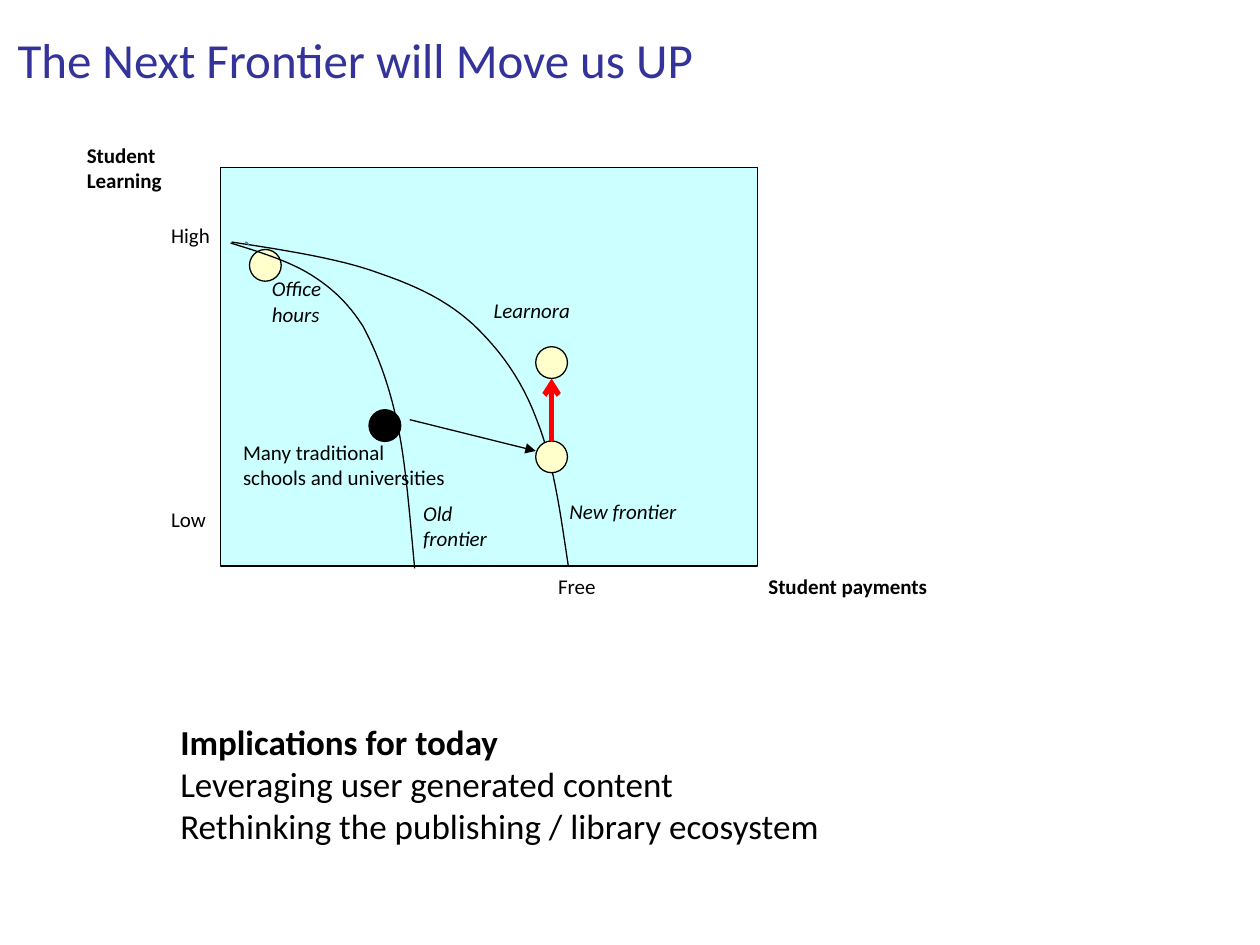
from lxml.etree import SubElement
from pptx import Presentation
from pptx.dml.color import RGBColor
from pptx.enum.shapes import MSO_CONNECTOR, MSO_SHAPE
from pptx.enum.text import MSO_ANCHOR, MSO_AUTO_SIZE, PP_ALIGN
from pptx.oxml.ns import qn
from pptx.util import Cm, Pt

BLACK, NAVY, RED = "000000", "333399", "FF0000"
AQUA, CREAM, BLUE = "CCFFFF", "FFFFCC", "4B7EBC"
DOT_SIZE = 0.64
CURVE_STEPS = 12


def color(hex_string):
    return RGBColor.from_string(hex_string)


def bezier(points):
    """Sample a chain of cubic curves: a start, then three points per curve."""
    samples = [points[0]]
    for first in range(0, len(points) - 1, 3):
        a, b, c, d = points[first:first + 4]
        for step in range(1, CURVE_STEPS + 1):
            t = step / CURVE_STEPS
            u = 1 - t
            samples.append(tuple(
                u**3 * a[axis] + 3 * u * u * t * b[axis]
                + 3 * u * t * t * c[axis] + t**3 * d[axis]
                for axis in (0, 1)))
    return samples


class SlideBuilder:
    font = "Calibri"
    label_size = 12
    line_width = 0.75

    def __init__(self, slide):
        self.slide = slide
        self.shapes = slide.shapes

    def format_text(self, paragraph, size, text_color=BLACK, bold=False, italic=False):
        paragraph.alignment = PP_ALIGN.LEFT
        paragraph.space_before = Pt(0)
        for run in paragraph.runs:
            font = run.font
            font.name, font.size = self.font, Pt(size)
            font.bold, font.italic = bold, italic
            font.color.rgb = color(text_color)

    def place(self, shape, left, top, width, height):
        shape.left, shape.top = Cm(left), Cm(top)
        shape.width, shape.height = Cm(width), Cm(height)

    def title(self, text, *box):
        shape = self.shapes.title
        self.place(shape, *box)
        frame = shape.text_frame
        frame.text = text
        frame.vertical_anchor = MSO_ANCHOR.BOTTOM
        frame.auto_size = MSO_AUTO_SIZE.NONE
        self.format_text(frame.paragraphs[0], 28, NAVY)

    def body(self, lines, *box):
        shape = self.slide.placeholders[1]
        self.place(shape, *box)
        frame = shape.text_frame
        frame.text = "\n".join(lines)
        frame.word_wrap = False
        frame.auto_size = MSO_AUTO_SIZE.NONE
        for index, paragraph in enumerate(frame.paragraphs):
            self.format_text(paragraph, 20, bold=index == 0)
            properties = paragraph._p.get_or_add_pPr()
            properties.set("marL", "0")
            properties.set("indent", "0")
            SubElement(properties, qn("a:buNone"))

    def label(self, text, left, top, width, height=0.76, wrap=False, **style):
        shape = self.shapes.add_textbox(Cm(left), Cm(top), Cm(width), Cm(height))
        frame = shape.text_frame
        frame.text = text
        frame.word_wrap = wrap
        for paragraph in frame.paragraphs:
            self.format_text(paragraph, self.label_size, **style)

    def outline(self, shape, line_color=BLACK, fill=None):
        shape.shadow.inherit = False
        shape.line.color.rgb = color(line_color)
        shape.line.width = Pt(self.line_width)
        if fill:
            shape.fill.solid()
            shape.fill.fore_color.rgb = color(fill)
        else:
            shape.fill.background()

    def shape(self, kind, left, top, width, height, fill=None, line_color=BLACK):
        shape = self.shapes.add_shape(kind, Cm(left), Cm(top), Cm(width), Cm(height))
        self.outline(shape, line_color, fill)

    def dot(self, left, top, fill=CREAM):
        self.shape(MSO_SHAPE.OVAL, left, top, DOT_SIZE, DOT_SIZE, fill)

    def curve(self, points):
        start, *rest = [(Cm(x), Cm(y)) for x, y in bezier(points)]
        builder = self.shapes.build_freeform(*start)
        builder.add_line_segments(rest, close=False)
        self.outline(builder.convert_to_shape())

    def arrow(self, start, end, head, line_color=BLACK, width=line_width):
        connector = self.shapes.add_connector(
            MSO_CONNECTOR.STRAIGHT, *(Cm(value) for value in (*start, *end)))
        connector.line.color.rgb = color(line_color)
        connector.line.width = Pt(width)
        SubElement(connector.line._get_or_add_ln(), qn("a:tailEnd"), type=head)
        SubElement(connector._element.spPr, qn("a:effectLst"))


def main():
    presentation = Presentation()
    presentation.slide_width, presentation.slide_height = Cm(25.4), Cm(19.05)
    slide = presentation.slides.add_slide(presentation.slide_layouts[1])
    builder = SlideBuilder(slide)

    # Title and implications
    builder.title("The Next Frontier will Move us UP", 0.1, -0.2, 23.06, 2.11)
    builder.body(["Implications for today",
                  "Leveraging user generated content",
                  "Rethinking the publishing / library ecosystem"],
                 3.38, 14.4, 13.51, 2.82)

    # Plot area and axis labels
    builder.shape(MSO_SHAPE.RECTANGLE, 4.45, 3.38, 10.82, 8.03, AQUA)
    builder.label("Student\nLearning", 1.5, 2.74, 2.31, 1.27, bold=True)
    builder.label("High", 3.2, 4.37, 1.37)
    builder.label("Low", 3.2, 10.08, 1.3)
    builder.label("Free", 11, 11.43, 1.27)
    builder.label("Student payments", 15.24, 11.43, 3.76, bold=True)

    # Frontiers, with the dots that lie beneath or on them
    builder.curve([(4.67, 4.88), (5.77, 5.05), (6.83, 5.21), (7.65, 5.51),
                   (8.46, 5.79), (9.02, 6.07), (9.55, 6.55),
                   (10.08, 7.06), (10.52, 7.65), (10.82, 8.46),
                   (11.15, 9.27), (11.3, 10.34), (11.46, 11.43)])
    builder.dot(10.8, 8.89)
    builder.dot(5.03, 5.03)
    builder.dot(7.44, 8.26, BLACK)
    builder.curve([(4.65, 4.9), (5.23, 5.08), (5.82, 5.26), (6.27, 5.54),
                   (6.71, 5.82), (7.01, 6.1), (7.32, 6.58),
                   (7.59, 7.09), (7.82, 7.67), (8, 8.48),
                   (8.18, 9.3), (8.26, 10.39), (8.36, 11.46)])
    builder.shape(MSO_SHAPE.ARC, 4.88, 4.88, 0.13, 0.13, line_color=BLUE)
    builder.dot(10.8, 6.99)

    # Moves between positions
    builder.arrow((8.26, 8.46), (10.8, 9.09), "triangle")
    builder.arrow((11.12, 8.89), (11.12, 7.63), "arrow", RED, 3)

    # Labels inside the plot
    builder.label("Many traditional schools and universities",
                  4.65, 8.74, 4.7, 1.8, wrap=True)
    builder.label("Office hours", 5.23, 5.44, 2.11, 1.27, wrap=True, italic=True)
    builder.label("Learnora", 9.7, 5.87, 2.26, italic=True)
    builder.label("New frontier", 11.23, 9.93, 2.77, 1.27, wrap=True, italic=True)
    builder.label("Old frontier", 8.28, 9.96, 2.41, 1.3, wrap=True, italic=True)

    presentation.save("out.pptx")


if __name__ == "__main__":
    main()
